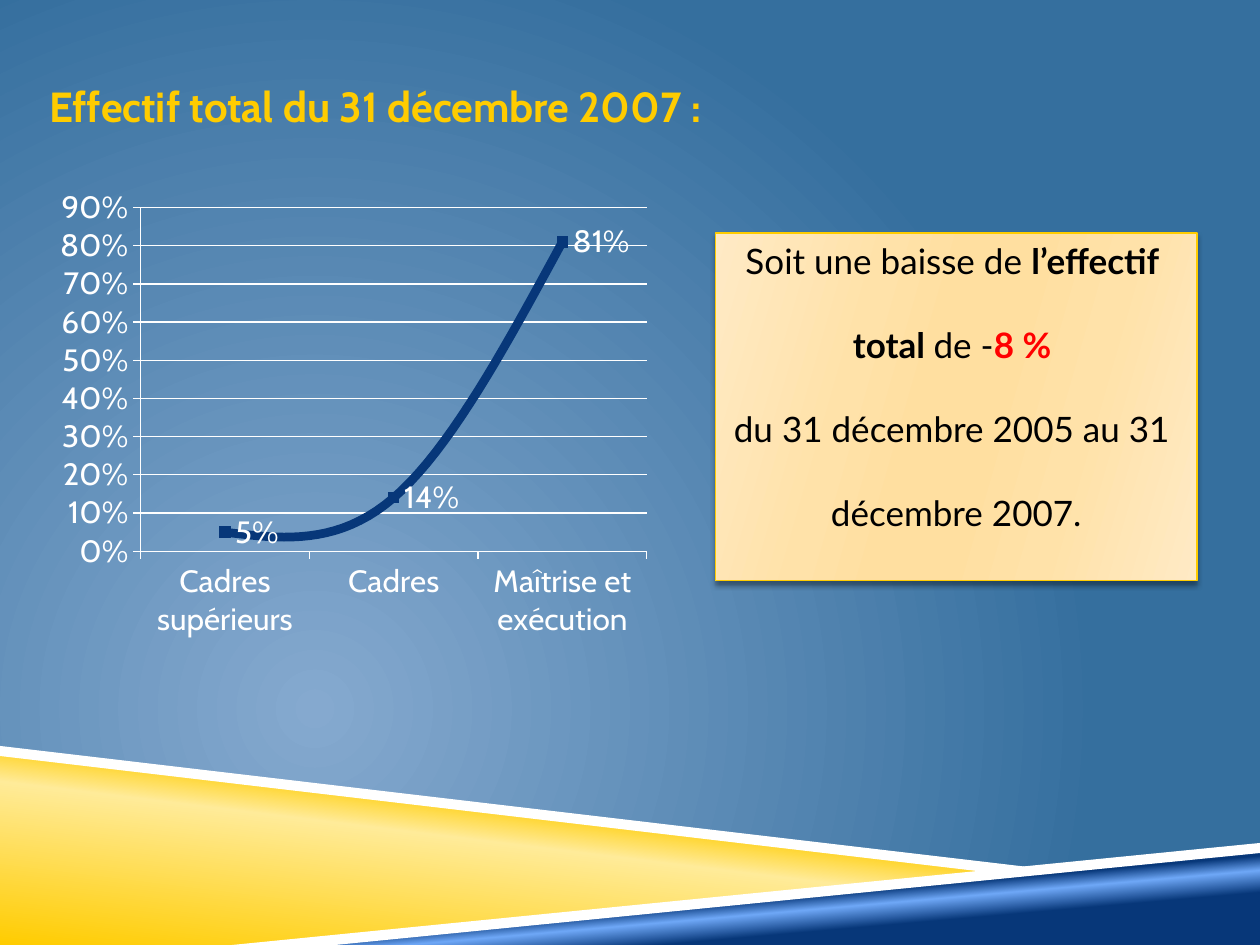
from lxml.etree import SubElement
from pptx import Presentation
from pptx.chart.data import CategoryChartData
from pptx.dml.color import RGBColor
from pptx.enum.chart import XL_CHART_TYPE, XL_LABEL_POSITION, XL_MARKER_STYLE, XL_TICK_MARK
from pptx.enum.shapes import MSO_SHAPE
from pptx.enum.text import MSO_ANCHOR, PP_ALIGN
from pptx.oxml.ns import qn
from pptx.util import Inches, Pt

COLS, ROWS = 100, 75
CELL = Inches(0.1)
GOLD, NAVY, WHITE, BLACK, RED = "FFCC00", "073779", "FFFFFF", "000000", "FF0000"
HEAD, BODY = "Cabin", "Lato"


def tint(code):
    return RGBColor.from_string(code)


def grid(*cells):
    return [round(cell * CELL) for cell in cells]


def node(root, tag, **attrs):
    return SubElement(root, qn(tag), {key: str(val) for key, val in attrs.items()})


def blend(fill, root, stops, angle=None, focus=None):
    fill.gradient()
    grad = root.find(".//" + qn("a:gradFill"))
    for child in list(grad):
        grad.remove(child)
    items = node(grad, "a:gsLst")
    for spot, code in stops:
        node(node(items, "a:gs", pos=spot * 1000), "a:srgbClr", val=code)
    if focus:
        rect = node(node(grad, "a:path", path="circle"), "a:fillToRect")
        for side, share in zip("ltrb", focus):
            rect.set(side, str(share * 1000))
    else:
        node(grad, "a:lin", ang=angle * 60000, scaled=0)


def add_run(para, text, size, face, code, bold=False):
    run = para.add_run()
    run.text = text
    font = run.font
    font.size, font.name, font.bold = Pt(size), face, bold
    font.color.rgb = tint(code)


def add_form(slide, box, points):
    left, top = box[:2]
    spots = [grid(left + x, top + y) for x, y in points]
    draft = slide.shapes.build_freeform(*spots[0], scale=1.0)
    draft.add_line_segments(spots[1:], close=True)
    form = draft.convert_to_shape()
    form.shadow.inherit = False
    form.line.fill.background()
    return form


def add_foot(slide, box):
    wide, high = box[2:]
    blue = add_form(slide, box, [(19.8, high), (wide, 8), (wide, high)])
    blend(blue.fill, blue._element, [(28, NAVY), (40, "6FA8F7"), (48, NAVY)], 265)
    gold = add_form(slide, box, [(0, 0.5), (79.2, 10), (20, high), (0, high)])
    blend(gold.fill, gold._element, [(0, GOLD), (52, "FFEB99"), (66, GOLD)], 277)
    for points in (
        [(0, 0), (0, 0.8), (79, 10.1), (83.2, 9.8)],
        [(wide, 7.7), (18.4, high), (26.6, high), (wide, 8.5)],
    ):
        band = add_form(slide, box, points)
        band.fill.solid()
        band.fill.fore_color.rgb = tint(WHITE)


def add_title(slide, box):
    frame = slide.shapes.add_textbox(*grid(*box)).text_frame
    frame.word_wrap = True
    frame.vertical_anchor = MSO_ANCHOR.BOTTOM
    frame.margin_left = frame.margin_right = 0
    add_run(frame.paragraphs[0], "Effectif total du 31 décembre 2007 :", 24, HEAD, GOLD, True)


def add_curve(slide, box):
    data = CategoryChartData(number_format="0%")
    data.categories = ["Cadres supérieurs", "Cadres", "Maîtrise et exécution"]
    data.add_series("Series 1", [0.05, 0.14, 0.81])
    chart = slide.shapes.add_chart(XL_CHART_TYPE.LINE_MARKERS, *grid(*box), data).chart
    chart.has_legend = chart.has_title = False
    chart.font.size, chart.font.name = Pt(18), HEAD
    chart.font.color.rgb = tint(WHITE)

    level = chart.value_axis
    level.minimum_scale, level.maximum_scale, level.major_unit = 0, 0.9, 0.1
    level.tick_labels.number_format = "0%"
    level.tick_labels.number_format_is_linked = False
    level.has_major_gridlines = True
    for axis in (level, chart.category_axis):
        axis.major_tick_mark = XL_TICK_MARK.OUTSIDE
    for part in (level, chart.category_axis, level.major_gridlines):
        part.format.line.color.rgb = tint(WHITE)
        part.format.line.width = Pt(0.75)

    plot = chart.plots[0]
    plot.vary_by_categories = False
    line = plot.series[0]
    line.smooth = True
    line.format.line.color.rgb = tint(NAVY)
    line.format.line.width = Pt(5)
    mark = line.marker
    mark.style, mark.size = XL_MARKER_STYLE.SQUARE, 6
    mark.format.fill.solid()
    mark.format.fill.fore_color.rgb = tint(NAVY)
    mark.format.line.color.rgb = tint(NAVY)
    tags = line.data_labels
    tags.show_value = True
    tags.number_format, tags.number_format_is_linked = "0%", False
    tags.position = XL_LABEL_POSITION.RIGHT

    area = chart._chartSpace.find(".//" + qn("c:plotArea"))
    for old in area.findall(qn("c:layout")):
        area.remove(old)
    frame = node(area, "c:layout")
    area.insert(0, frame)
    place = node(frame, "c:manualLayout")
    node(place, "c:layoutTarget", val="inner")
    for key in ("xMode", "yMode"):
        node(place, "c:" + key, val="edge")
    for key, share in zip("xywh", (0.15, 0.02, 0.83, 0.77)):
        node(place, "c:" + key, val=share)


def add_card(slide, box):
    card = slide.shapes.add_shape(MSO_SHAPE.RECTANGLE, *grid(*box))
    card.shadow.inherit = False
    pale, warm, deep = "FFEAC5", "FFE2A9", "FFDFA0"
    stops = [(0, pale), (30, warm), (45, deep), (55, deep), (73, warm), (100, pale)]
    blend(card.fill, card._element, stops, 16)
    card.line.color.rgb = tint(GOLD)
    card.line.width = Pt(0.75)
    glow = card._element.spPr.find(qn("a:effectLst"))
    shade = node(glow, "a:outerShdw", blurRad=Pt(3), dist=Pt(2), dir=90 * 60000, rotWithShape=0)
    node(node(shade, "a:srgbClr", val=BLACK), "a:alpha", val=40000)

    frame = card.text_frame
    frame.word_wrap = True
    frame.vertical_anchor = MSO_ANCHOR.TOP
    lines = [
        [("Soit une baisse de ", BLACK, False), ("l’effectif ", BLACK, True)],
        [("total ", BLACK, True), ("de -", BLACK, False), ("8 % ", RED, True)],
        [("du 31 décembre 2005 au 31 ", BLACK, False)],
        [("décembre 2007.", BLACK, False)],
    ]
    for rank, runs in enumerate(lines):
        para = frame.add_paragraph() if rank else frame.paragraphs[0]
        para.alignment = PP_ALIGN.CENTER
        if rank:
            para.space_before = Pt(24)
        for text, code, bold in runs:
            add_run(para, text, 20, BODY, code, bold)


def main():
    deck = Presentation()
    deck.slide_width, deck.slide_height = grid(COLS, ROWS)
    slide = deck.slides.add_slide(deck.slide_layouts[6])
    blend(slide.background.fill, slide._element, [(0, "85A9CF"), (100, "356F9E")],
          focus=(50, 100, 100, 50))
    add_foot(slide, (0, 59.2, COLS, 15.8))
    add_title(slide, (3.9, 3.9, 58.8, 7))
    add_curve(slide, (3.9, 15, 48.4, 36.2))
    add_card(slide, (56.8, 18.5, 38.2, 27.6))
    deck.save("out.pptx")


if __name__ == "__main__":
    main()
